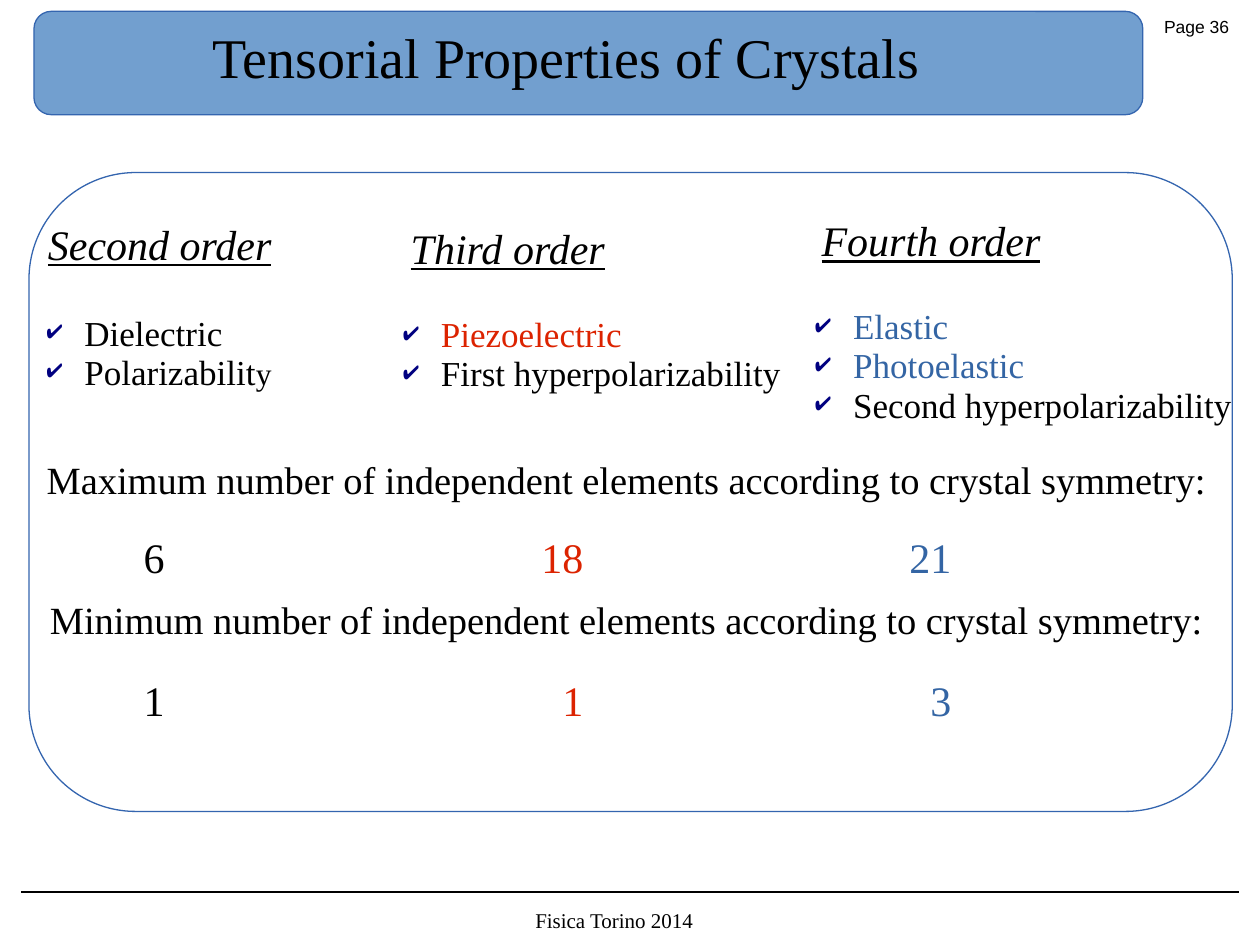
from lxml import etree
from pptx import Presentation, util as u
from pptx.dml.color import RGBColor
from pptx.enum import shapes, text
from pptx.oxml.ns import qn

BLACK = RGBColor(0, 0, 0)
RED = RGBColor(0xDC, 0x23, 0x00)
BLUE = RGBColor(0x34, 0x65, 0xA4)
EDGE = RGBColor(0x34, 0x65, 0xAF)
BAND = RGBColor(0x72, 0x9F, 0xCF)
COLS, ROWS = 100, 75
SERIF = "Times New Roman"
LEFT, MID = text.PP_ALIGN.LEFT, text.PP_ALIGN.CENTER


class Page:
    """Draws on one slide; boxes are (column, row, columns, rows) of the grid."""

    def __init__(self, deck):
        self.slide = deck.slides.add_slide(deck.slide_layouts[6])
        self.dx = deck.slide_width / COLS
        self.dy = deck.slide_height / ROWS

    def place(self, box):
        x, y, w, h = box
        return [u.Emu(round(n)) for n in
                (x * self.dx, y * self.dy, w * self.dx, h * self.dy)]

    def panel(self, box, fill=None):
        shape = self.slide.shapes.add_shape(
            shapes.MSO_SHAPE.ROUNDED_RECTANGLE, *self.place(box))
        shape.shadow.inherit = False
        shape.adjustments[0] = 0.167
        if fill is None:
            shape.fill.background()
        else:
            shape.fill.solid()
            shape.fill.fore_color.rgb = fill
        shape.line.color.rgb = EDGE
        shape.line.width = u.Pt(0.75)

    def rule(self, x, y, end):
        left, top, right, _ = self.place((x, y, end, 0))
        line = self.slide.shapes.add_connector(
            shapes.MSO_CONNECTOR.STRAIGHT, left, top, right, top)
        line.line.color.rgb = BLACK
        line.line.width = u.Pt(0.75)
        etree.SubElement(line._element.spPr, qn("a:effectLst"))

    def frame(self, box, pad=(0.09, 0.04), wrap=True):
        frame = self.slide.shapes.add_textbox(*self.place(box)).text_frame
        frame.word_wrap = wrap
        frame.margin_left = frame.margin_right = u.Inches(pad[0])
        frame.margin_top = frame.margin_bottom = u.Inches(pad[1])
        return frame

    def style(self, para, size, font=SERIF, align=LEFT, gap=0.93):
        para.alignment = align
        para.line_spacing = gap
        para.font.size = u.Pt(size)
        para.font.name = font
        para.font.color.rgb = BLACK

    def label(self, box, words, size, pad=(0.09, 0.04), wrap=True, **look):
        para = self.frame(box, pad, wrap).paragraphs[0]
        para.text = words
        self.style(para, size, **look)
        return para

    def head(self, box, words):
        font = self.label(box, words, 24).font
        font.italic = font.underline = True

    def checks(self, box, items):
        """Adds a list with check marks; each item is a list of (words, colour, size)."""
        frame = self.frame(box)
        for n, item in enumerate(items):
            para = frame.add_paragraph() if n else frame.paragraphs[0]
            props = para._p.get_or_add_pPr()
            hang = u.Inches(0.3)
            props.set("marL", str(hang))
            props.set("indent", str(-hang))
            tint = etree.SubElement(props, qn("a:buClr"))
            etree.SubElement(tint, qn("a:srgbClr"), val="000080")
            etree.SubElement(props, qn("a:buSzPct"), val="70000")
            etree.SubElement(props, qn("a:buChar"), char="✔")
            self.style(para, 20)
            self.runs(para, item)

    def runs(self, para, parts):
        for words, tint, size in parts:
            run = para.add_run()
            run.text = words
            run.font.color.rgb = tint
            run.font.size = u.Pt(size)

    def counts(self, box, values):
        """Adds one row of numbers, the later ones set at right tabs."""
        para = self.frame(box).paragraphs[0]
        tabs = etree.SubElement(para._p.get_or_add_pPr(), qn("a:tabLst"))
        for stop in (3.49, 6.41):
            etree.SubElement(tabs, qn("a:tab"), pos=str(u.Inches(stop)), algn="r")
        self.style(para, 24)
        self.runs(para, [(("\t" if n else "") + value, tint, 24) for n, (value, tint)
                         in enumerate(zip(values, (BLACK, RED, BLUE)))])


def main():
    deck = Presentation()
    deck.slide_width, deck.slide_height = u.Inches(10), u.Inches(7.5)
    page = Page(deck)

    page.label((27.5, 71.5, 42.5, 3), "Fisica Torino 2014", 12,
               pad=(0.1, 0.05), align=MID, gap=1)
    page.label((91.4, 0.8, 8.3, 2.7), "Page 36", 10,
               pad=(0.1, 0.05), wrap=False, font="Arial", gap=1)
    page.rule(1.7, 70.8, 98.3)
    page.panel((2.7, 0.9, 88, 8.2), BAND)
    page.label((0, 1.8, 89.9, 10.7), "Tensorial Properties of Crystals", 32,
               pad=(0, 0), align=MID, gap=1)

    page.head((2.9, 17.3, 24.9, 4.5), "Second order")
    page.head((31.7, 17.6, 19, 4.5), "Third order")
    page.head((64.3, 17, 20.9, 4.6), "Fourth order")

    page.checks((2.8, 24.6, 24, 9.6), [
        [("Dielectric", BLACK, 20)],
        [("Polarizabilit", BLACK, 20), ("y", BLACK, 18)]])
    page.checks((31.1, 24.7, 33, 9.9), [
        [("Piezoelectric", RED, 20)],
        [("First hyperpolarizability", BLACK, 20)]])
    page.checks((63.8, 24.1, 36.2, 13.3), [
        [("Elastic", BLUE, 20)],
        [("Photoelastic", BLUE, 20)],
        [("Second hyperpolarizability", BLACK, 20)]])

    page.panel((2.3, 13.7, 95.5, 50.7))
    for bound, top, row, values in (("Maximum", 36.1, 42.1, ("6", "18", "21")),
                                    ("Minimum", 47.2, 53.5, ("1", "1", "3"))):
        page.label((0.9, top, 97.6, 4.3),
                   f"{bound} number of independent elements according to crystal symmetry:",
                   22, align=MID)
        page.counts((10.5, row, 86.2, 4.5), values)

    deck.save("out.pptx")


if __name__ == "__main__":
    main()
